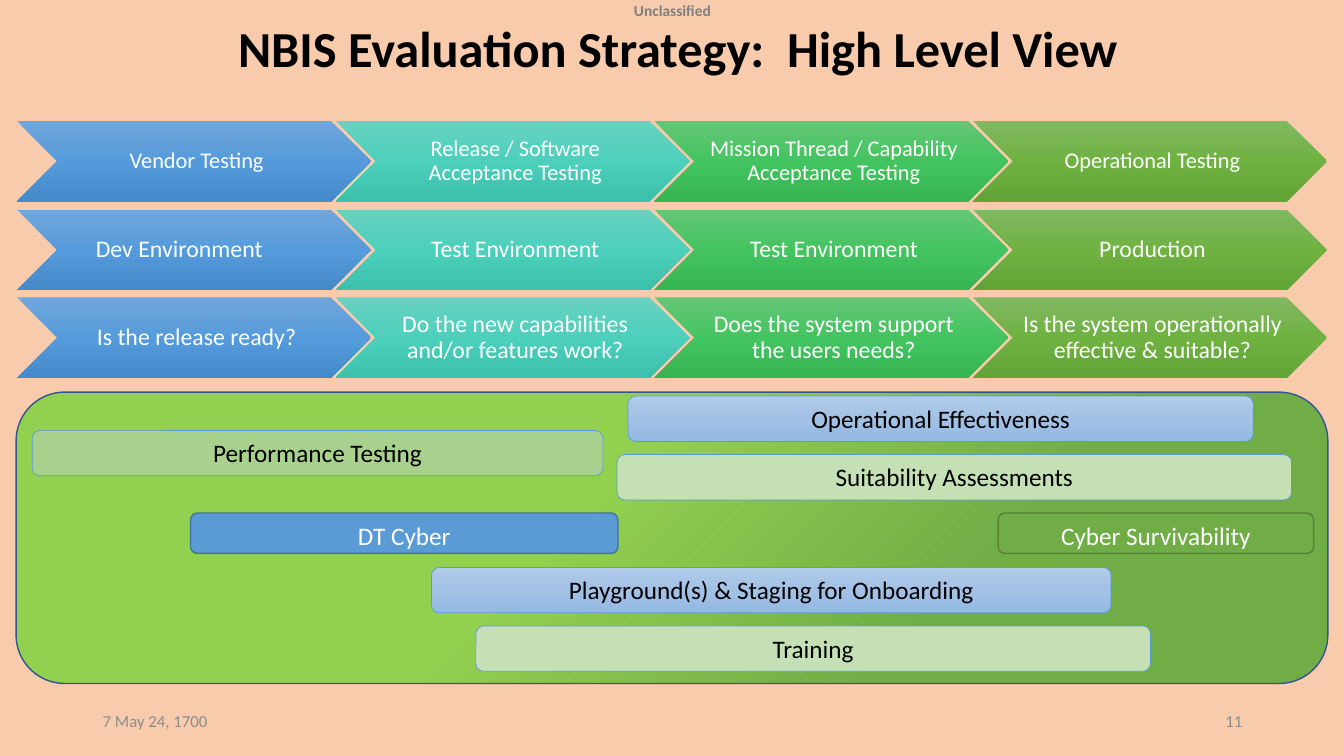
import pptx
import pptx.dml.color
import pptx.enum.shapes
import pptx.enum.text
import pptx.oxml
import pptx.oxml.ns
import pptx.util

Inches = pptx.util.Inches
Pt = pptx.util.Pt
SHAPE = pptx.enum.shapes.MSO_SHAPE
ALIGN = pptx.enum.text.PP_ALIGN
ANCHOR = pptx.enum.text.MSO_ANCHOR

STAGE_GRADIENTS = [
    [(0, "71A6DB"), (50, "559BDB"), (100, "448ACA")],
    [(0, "6AD1C0"), (50, "4CD0BC"), (100, "3CC0AC")],
    [(0, "64C677"), (50, "44C460"), (100, "36B552")],
    [(0, "81B861"), (50, "6FB242"), (100, "62A336")],
]
STAGE_ROWS = [
    (1.2, 16, ["Vendor Testing", "Release / Software Acceptance Testing",
               "Mission Thread / Capability Acceptance Testing", "Operational Testing"]),
    (2.08, 17, ["Dev Environment\t", "Test Environment", "Test Environment", "Production"]),
    (2.95, 17, ["Is the release ready?", "Do the new capabilities and/or features work?",
                "Does the system support the users needs?",
                "Is the system operationally effective & suitable?"]),
]
PALE_BLUE = [(0, "B1CBE9"), (50, "A3C1E5"), (100, "93B9E4")]
PANEL_GREEN = [(28, "70AD47"), (58, "92D050")]
ACTIVITIES = [
    ("DT Cyber", (1.89, 5.09, 4.24, 0.4), "5B9BD5", "43739E", 1, "FFFFFF"),
    ("Cyber Survivability", (9.9, 5.09, 3.13, 0.4), "70AD47", "538035", 1, "FFFFFF"),
    ("Suitability Assessments", (6.12, 4.51, 6.69, 0.45), "C5E0B4", "5B9BD5", 0.5, "000000"),
    ("Operational Effectiveness", (6.23, 3.93, 6.2, 0.45), PALE_BLUE, "5B9BD5", 0.5, "000000"),
    ("Training", (4.72, 6.21, 6.69, 0.45), "C5E0B4", "5B9BD5", 0.5, "000000"),
    ("Playground(s) & Staging for Onboarding", (4.28, 5.63, 6.74, 0.45),
     PALE_BLUE, "5B9BD5", 0.5, "000000"),
    ("Performance Testing", (0.32, 4.27, 5.66, 0.45), "A9D18E", "5B9BD5", 0.5, "000000"),
]


def rgb(value):
    return pptx.dml.color.RGBColor.from_string(value)


def fill_gradient(shape, stops, angle):
    shape.fill.gradient()
    shape.fill.gradient_angle = 360 - angle
    stop_list = shape.fill._fill._gradFill.find(pptx.oxml.ns.qn("a:gsLst"))
    for stop in list(stop_list):
        stop_list.remove(stop)
    for position, color in stops:
        stop_list.append(pptx.oxml.parse_xml(
            f'<a:gs {pptx.oxml.ns.nsdecls("a")} pos="{position * 1000}">'
            f'<a:srgbClr val="{color}"/></a:gs>'))


def write(shape, text, size, color, align=ALIGN.CENTER, anchor=ANCHOR.MIDDLE,
          bold=False, spacing=1.0, insets=(0.1, 0.05, 0.1, 0.05)):
    frame = shape.text_frame
    frame.word_wrap = True
    frame.vertical_anchor = anchor
    (frame.margin_left, frame.margin_top,
     frame.margin_right, frame.margin_bottom) = map(Inches, insets)
    frame.text = text
    para = frame.paragraphs[0]
    para.alignment = align
    para.line_spacing = spacing
    for span in para.runs:
        span.font.name = "Calibri"
        span.font.size = Pt(size)
        span.font.bold = bold
        span.font.color.rgb = rgb(color)


def add_label(page, place, text, size, color, **layout):
    box = page.shapes.add_textbox(*map(Inches, place))
    write(box, text, size, color, **layout)


def add_block(page, kind, place, fill, angle=90, line=None, width=1):
    block = page.shapes.add_shape(kind, *map(Inches, place))
    block.shadow.inherit = False
    if isinstance(fill, str):
        block.fill.solid()
        block.fill.fore_color.rgb = rgb(fill)
    else:
        fill_gradient(block, fill, angle)
    if line:
        block.line.color.rgb = rgb(line)
        block.line.width = Pt(width)
    else:
        block.line.fill.background()
    return block


def add_stage_row(page, top, size, texts):
    for column, (text, stops) in enumerate(zip(texts, STAGE_GRADIENTS)):
        place = (0.17 + 3.16 * column, top, 3.51, 0.8)
        chevron = add_block(page, SHAPE.CHEVRON, place, stops)
        write(chevron, text, size, "FFFFFF", spacing=0.9, insets=(0.07, 0.02, 0.02, 0.02))


def add_activity(page, text, place, fill, line, width, color):
    bar = add_block(page, SHAPE.ROUNDED_RECTANGLE, place, fill, line=line, width=width)
    write(bar, text, 18, color, anchor=ANCHOR.TOP)


def main():
    deck = pptx.Presentation()
    deck.slide_width = Inches(13.33)
    deck.slide_height = Inches(7.5)
    page = deck.slides.add_slide(deck.slide_layouts[6])
    page.background.fill.solid()
    page.background.fill.fore_color.rgb = rgb("F8CBAD")

    add_label(page, (1.48, 0.24, 10.49, 0.59), "NBIS Evaluation Strategy:  High Level View",
              36, "000000", anchor=ANCHOR.BOTTOM, bold=True, spacing=0.9)
    add_label(page, (4.42, 0, 4.5, 0.4), "Unclassified", 11, "808080",
              anchor=ANCHOR.TOP, bold=True, insets=(0.1, 0.01, 0.1, 0.05))
    for top, size, texts in STAGE_ROWS:
        add_stage_row(page, top, size, texts)
    add_block(page, SHAPE.ROUNDED_RECTANGLE, (0.16, 3.89, 13.01, 2.89),
              PANEL_GREEN, angle=225, line="325491")
    for activity in ACTIVITIES:
        add_activity(page, *activity)
    add_label(page, (0.92, 6.95, 3, 0.4), "7 May 24, 1700", 12, "8C8C8C", align=ALIGN.LEFT)
    add_label(page, (9.42, 6.95, 3, 0.4), "11", 12, "8C8C8C", align=ALIGN.RIGHT)

    deck.save("out.pptx")


if __name__ == "__main__":
    main()
